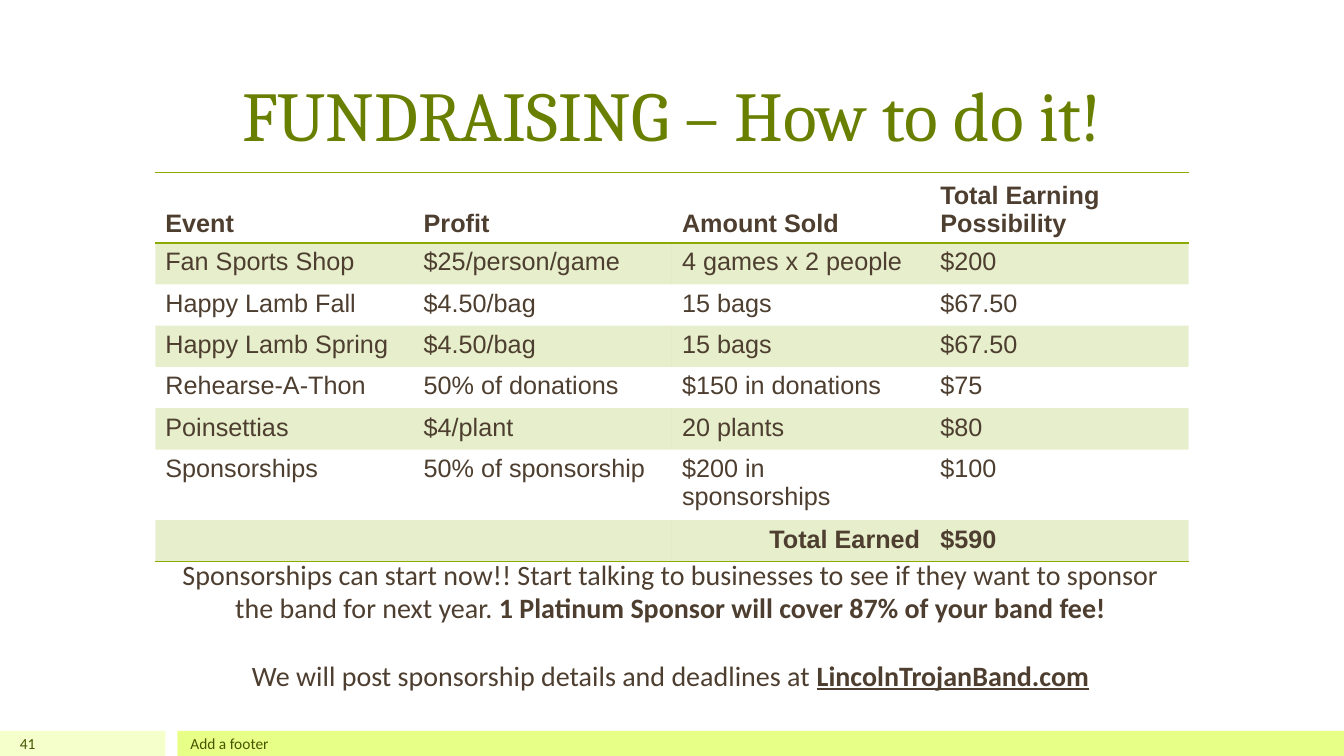
"""Builds the band fundraising slide with its earnings table."""
import pptx
import pptx.dml.color
import pptx.enum.shapes
import pptx.enum.text
import pptx.oxml
import pptx.oxml.ns
import pptx.util

Inches = pptx.util.Inches
Pt = pptx.util.Pt
ALIGN = pptx.enum.text.PP_ALIGN
ANCHOR = pptx.enum.text.MSO_ANCHOR
AUTO_SIZE = pptx.enum.text.MSO_AUTO_SIZE

COLORS = {
    "title": "687F00",
    "footer": "455500",
    "text": "4D3E2F",
    "accent": "8BAA00",
    "pale": "F4FFCB",
    "lime": "E8FF87",
}
NO_STYLE = "{2D5ABB26-0587-4C30-8999-92F81FD0307C}"
ROW_HEIGHT = 0.41
TABLE_WIDTH = 10.25
EVENTS = [
    ["Event", "Profit", "Amount Sold", "Total Earning Possibility"],
    ["Fan Sports Shop", "$25/person/game", "4 games x 2 people", "$200"],
    ["Happy Lamb Fall", "$4.50/bag", "15 bags", "$67.50"],
    ["Happy Lamb Spring", "$4.50/bag", "15 bags", "$67.50"],
    ["Rehearse-A-Thon", "50% of donations", "$150 in donations", "$75"],
    ["Poinsettias", "$4/plant", "20 plants", "$80"],
    ["Sponsorships", "50% of sponsorship", "$200 in sponsorships", "$100"],
    ["", "", "Total Earned", "$590"],
]


def rgb(name):
    return pptx.dml.color.RGBColor.from_string(COLORS[name])


def place(shape, left, top, width, height):
    shape.left, shape.top = Inches(left), Inches(top)
    shape.width, shape.height = Inches(width), Inches(height)


def add_run(paragraph, text, font, size, color, bold=False, underline=None):
    run = paragraph.add_run()
    run.text = text
    run.font.name = font
    run.font.size = Pt(size)
    run.font.color.rgb = rgb(color)
    run.font.bold = bold
    run.font.underline = underline


def add_bar(slide, left, width, color):
    bar = slide.shapes.add_shape(
        pptx.enum.shapes.MSO_SHAPE.RECTANGLE,
        Inches(left), Inches(7.25), Inches(width), Inches(0.25))
    bar.shadow.inherit = False
    bar.fill.solid()
    bar.fill.fore_color.rgb = rgb(color)
    bar.line.fill.background()


def add_text_frame(slide, left, top, width, height):
    box = slide.shapes.add_textbox(
        Inches(left), Inches(top), Inches(width), Inches(height))
    box.text_frame.word_wrap = True
    return box.text_frame


def add_footer_text(slide, left, width, text, align):
    frame = add_text_frame(slide, left, 7.25, width, 0.25)
    frame.vertical_anchor = ANCHOR.MIDDLE
    frame.paragraphs[0].alignment = align
    add_run(frame.paragraphs[0], text, "Calibri", 11, "footer")


def add_title(slide, text):
    title = slide.shapes.title
    place(title, 1.54, 0.3, 10.25, 1.29)
    frame = title.text_frame
    frame.auto_size = AUTO_SIZE.NONE
    frame.vertical_anchor = ANCHOR.BOTTOM
    frame.paragraphs[0].alignment = ALIGN.CENTER
    add_run(frame.paragraphs[0], text, "Cambria", 50, "title")


def tint(cell):
    cell.fill.solid()
    cell.fill.fore_color.rgb = rgb("accent")
    color = cell.fill.fore_color._xFill.find(pptx.oxml.ns.qn("a:srgbClr"))
    color.append(pptx.oxml.parse_xml(
        f'<a:alpha {pptx.oxml.ns.nsdecls("a")} val="20000"/>'))


def add_border(cell, side):
    cell._tc.get_or_add_tcPr().insert(0, pptx.oxml.parse_xml(
        f'<a:{side} {pptx.oxml.ns.nsdecls("a")} w="12700"><a:solidFill>'
        f'<a:srgbClr val="{COLORS["accent"]}"/></a:solidFill></a:{side}>'))


def add_earnings_table(slide):
    last = len(EVENTS) - 1
    table = slide.shapes.add_table(
        len(EVENTS), len(EVENTS[0]), Inches(1.54), Inches(1.71),
        Inches(TABLE_WIDTH), Inches(ROW_HEIGHT * len(EVENTS))).table
    table.first_row = table.horz_banding = False
    table._tbl.tblPr.find(pptx.oxml.ns.qn("a:tableStyleId")).text = NO_STYLE
    for row, values in enumerate(EVENTS):
        table.rows[row].height = Inches(ROW_HEIGHT)
        for column, value in enumerate(values):
            cell = table.cell(row, column)
            if row % 2:
                tint(cell)
            else:
                cell.fill.background()
            if row in (0, last):
                add_border(cell, "lnB")
            if row == 0:
                add_border(cell, "lnT")
                cell.vertical_anchor = ANCHOR.BOTTOM
            if value:
                add_run(cell.text_frame.paragraphs[0], value, "Arial", 18,
                        "text", bold=row in (0, last))
    table.cell(last, 2).text_frame.paragraphs[0].alignment = ALIGN.RIGHT


def add_sponsorship_note(slide):
    frame = add_text_frame(slide, 1.59, 5.48, 10.12, 1.45)
    frame.auto_size = AUTO_SIZE.SHAPE_TO_FIT_TEXT
    call = frame.paragraphs[0]
    call.alignment = ALIGN.CENTER
    add_run(call, "Sponsorships can start now!! Start talking to businesses to "
            "see if they want to sponsor the band for next year. ",
            "Calibri", 20, "text")
    add_run(call, "1 Platinum Sponsor will cover 87% of your band fee!",
            "Calibri", 20, "text", bold=True)
    details = frame.add_paragraph()
    details.alignment = ALIGN.CENTER
    details.space_before = Pt(24)
    add_run(details, "We will post sponsorship details and deadlines at ",
            "Calibri", 20, "text")
    add_run(details, "LincolnTrojanBand.com", "Calibri", 20, "text",
            bold=True, underline=True)


def main():
    deck = pptx.Presentation()
    deck.slide_width, deck.slide_height = Inches(13.33), Inches(7.5)
    slide = deck.slides.add_slide(deck.slide_layouts.get_by_name("Title Only"))
    add_bar(slide, 0, 1.64, "pale")
    add_bar(slide, 1.76, 11.57, "lime")
    add_title(slide, "FUNDRAISING – How to do it!")
    add_footer_text(slide, 0, 0.45, "41", ALIGN.RIGHT)
    add_footer_text(slide, 1.79, 10, "Add a footer", ALIGN.LEFT)
    add_earnings_table(slide)
    add_sponsorship_note(slide)
    deck.save("out.pptx")


if __name__ == "__main__":
    main()
